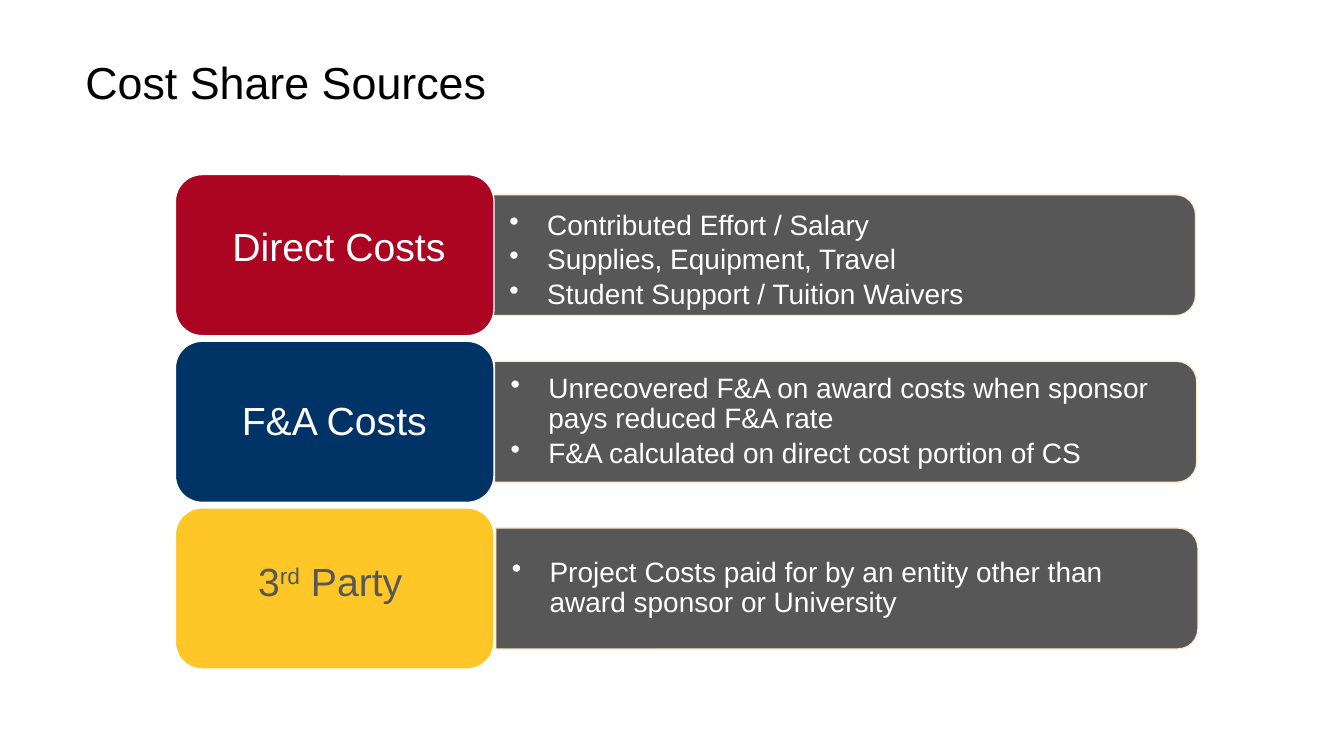
import pptx
import pptx.dml.color
import pptx.enum.shapes
import pptx.enum.text
import pptx.util
from dataclasses import dataclass
from lxml import etree

Cm = pptx.util.Cm
Pt = pptx.util.Pt
Shape = pptx.enum.shapes.MSO_SHAPE
Align = pptx.enum.text.PP_ALIGN
Anchor = pptx.enum.text.MSO_ANCHOR


@dataclass(frozen=True)
class Theme:
    font: str = "Arial"
    black: str = "000000"
    white: str = "FFFFFF"
    grey: str = "575757"
    cream: str = "FFEACD"
    red: str = "AB0521"
    navy: str = "003366"
    gold: str = "FFC627"
    title_size: int = 32
    label_size: int = 28
    body_size: int = 20


class SlideBuilder:
    def __init__(self, deck, theme):
        self.theme = theme
        self.page = deck.slides.add_slide(deck.slide_layouts[5])

    def colour(self, code):
        return pptx.dml.color.RGBColor.from_string(code)

    def span(self, para, text, size, colour, raised=False):
        span = para.add_run()
        span.text = text
        span.font.name = self.theme.font
        span.font.size = Pt(size)
        span.font.color.rgb = self.colour(colour)
        if raised:
            span.font._element.set("baseline", "30000")

    def frame(self, box, anchor, side, edge):
        """Set wrapping, anchoring and margins of a box's text."""
        frame = box.text_frame
        frame.word_wrap = True
        frame.auto_size = pptx.enum.text.MSO_AUTO_SIZE.NONE
        frame.vertical_anchor = anchor
        frame.margin_left = frame.margin_right = Cm(side)
        frame.margin_top = frame.margin_bottom = Cm(edge)
        return frame

    def title(self, text, left, top, width, height):
        box = self.page.shapes.title
        box.left, box.top, box.width, box.height = map(Cm, (left, top, width, height))
        para = self.frame(box, Anchor.TOP, 0.25, 0.13).paragraphs[0]
        para.alignment = Align.LEFT
        para.line_spacing = 0.9
        self.span(para, text, self.theme.title_size, self.theme.black)

    def block(self, kind, left, top, width, height, fill, line):
        block = self.page.shapes.add_shape(kind, *map(Cm, (left, top, width, height)))
        block.shadow.inherit = False
        block.fill.solid()
        block.fill.fore_color.rgb = self.colour(fill)
        block.line.color.rgb = self.colour(line)
        block.line.width = Pt(1)
        return block

    def panel(self, left, middle, length, depth):
        """Draw a bar rounded on its right end by turning a top-rounded shape."""
        block = self.block(Shape.ROUND_2_SAME_RECTANGLE,
                           left + (length - depth) / 2, middle - length / 2,
                           depth, length, self.theme.grey, self.theme.cream)
        block.rotation = 90

    def label(self, parts, place, colour):
        box = self.page.shapes.add_textbox(*map(Cm, place))
        para = self.frame(box, Anchor.MIDDLE, 0.51, 0.25).paragraphs[0]
        para.alignment = Align.CENTER
        para.line_spacing = 0.9
        for text, raised in parts:
            self.span(para, text, self.theme.label_size, colour, raised)

    def bullets(self, items, left, top, width, height):
        box = self.page.shapes.add_textbox(*map(Cm, (left, top, width, height)))
        frame = self.frame(box, Anchor.MIDDLE, 0.36, 0.18)
        for index, item in enumerate(items):
            para = frame.add_paragraph() if index else frame.paragraphs[0]
            properties = para._p.get_or_add_pPr()
            properties.set("marL", str(Cm(0.95)))
            properties.set("indent", str(-Cm(0.95)))
            bullet = etree.SubElement(properties, pptx.oxml.ns.qn("a:buChar"))
            bullet.set("char", "•")
            para.line_spacing = 0.9
            para.space_after = Pt(3)
            self.span(para, item, self.theme.body_size, self.theme.white)


def main():
    deck = pptx.Presentation()
    deck.slide_width, deck.slide_height = Cm(33.87), Cm(19.05)
    theme = Theme()
    slide = SlideBuilder(deck, theme)
    slide.title("Cost Share Sources", 1.9, 1.4, 30.05, 3.1)

    # label parts, label place, tile colour, label colour, bullet drop, bullets
    sources = [
        ([("Direct Costs", False)], (4.88, 4.62, 7.32, 3.28), theme.red, theme.white, 0.14,
         ["Contributed Effort / Salary", "Supplies, Equipment, Travel",
          "Student Support / Tuition Waivers"]),
        ([("F&A Costs", False)], (4.88, 8.94, 7.09, 3.43), theme.navy, theme.white, 0,
         ["Unrecovered F&A on award costs when sponsor pays reduced F&A rate",
          "F&A calculated on direct cost portion of CS"]),
        ([("3", False), ("rd", True), (" Party ", False)], (4.75, 13.06, 7.42, 3.3),
         theme.gold, theme.grey, 0,
         ["Project Costs paid for by an entity other than award sponsor or University"]),
    ]
    tile_height, panel_height, text_height = 4.06, 3.05, 2.74
    for row, (parts, place, fill, ink, drop, items) in enumerate(sources):
        top = 4.4 + 4.2 * row
        middle = top + tile_height / 2
        panel_left = 12.43 + 0.03 * row
        slide.panel(panel_left, middle, 17.7, panel_height)
        slide.bullets(items, panel_left + 0.05, middle - text_height / 2 + drop,
                      17.5, text_height)
        slide.block(Shape.ROUNDED_RECTANGLE, 4.42, top, 8.03, tile_height,
                    fill, theme.white)
        slide.label(parts, place, ink)
    deck.save("out.pptx")


if __name__ == "__main__":
    main()
